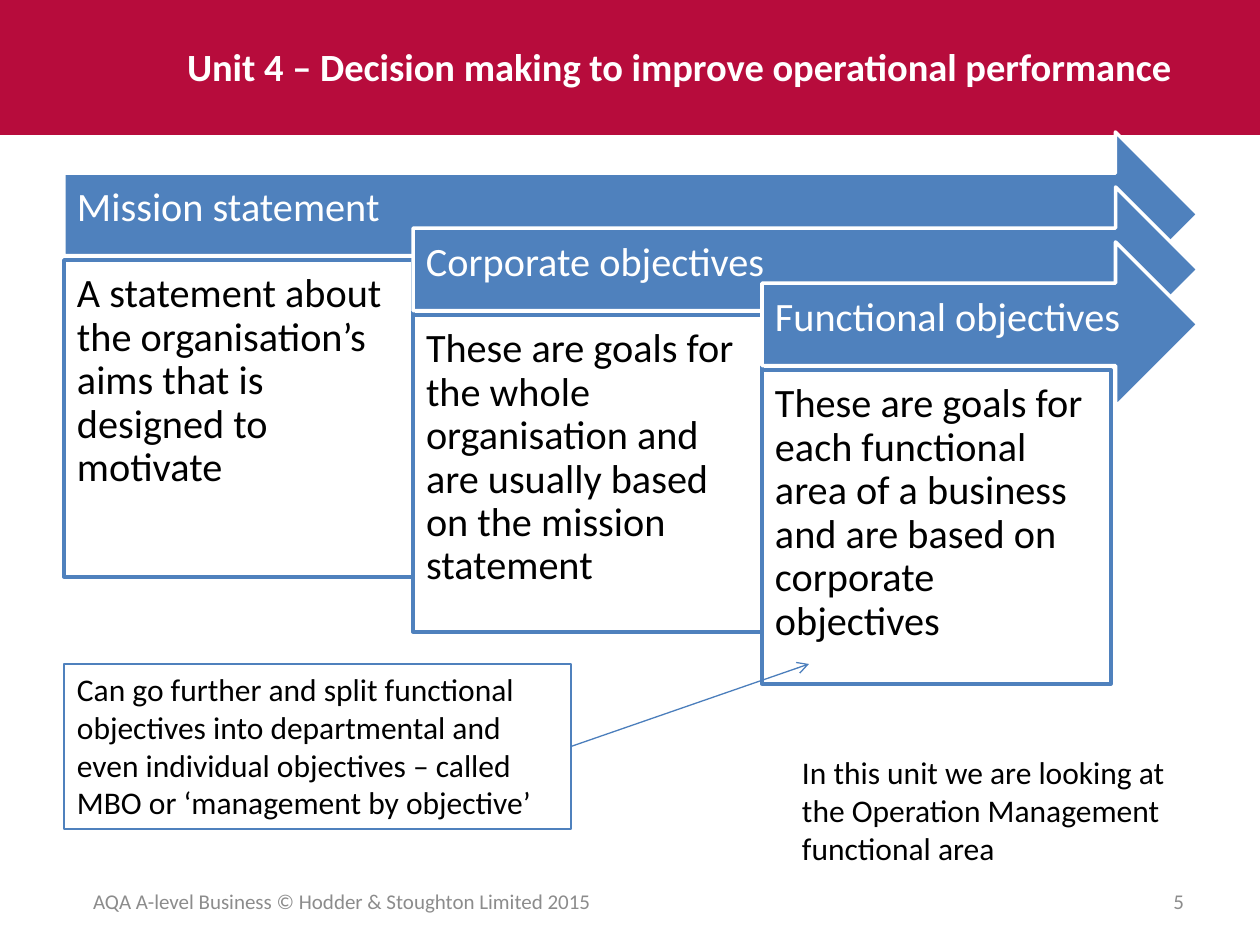
"""Builds the slide on mission, corporate and functional objectives."""
from lxml.etree import SubElement
from pptx import Presentation
from pptx.dml.color import RGBColor
from pptx.enum.shapes import MSO_CONNECTOR, MSO_SHAPE
from pptx.enum.text import MSO_ANCHOR, PP_ALIGN
from pptx.oxml.ns import qn
from pptx.util import Emu, Pt

EMU_PER_PX = 914400 / 126
COLORS = {"band": "B70C3C", "blue": "4F81BD", "link": "4B7EBC",
          "white": "FFFFFF", "black": "000000", "grey": "8C8C8C"}
FONT = "Calibri"
PAD = (13, 6, 13, 6)
STEP_X, STEP_Y = 349, 55
LEFT, ARROW_RIGHT, LABEL_RIGHT = 64, 1198, 1157
STEPS = [
    ("Mission statement",
     "A statement about the organisation’s aims that is designed to motivate", 317),
    ("Corporate objectives",
     "These are goals for the whole organisation and are usually based "
     "on the mission statement", 317),
    ("Functional objectives",
     "These are goals for each functional area of a business and are "
     "based on corporate objectives", 314),
]


def px(value):
    return Emu(round(value * EMU_PER_PX))


def rgb(name):
    return RGBColor.from_string(COLORS[name])


def write(sp, text, size, color="black", bold=False, align=PP_ALIGN.LEFT,
          anchor=MSO_ANCHOR.TOP, pad=PAD, spacing=None):
    tf = sp.text_frame
    tf.word_wrap = True
    tf.vertical_anchor = anchor
    tf.margin_left, tf.margin_top, tf.margin_right, tf.margin_bottom = map(px, pad)
    p = tf.paragraphs[0]
    p.alignment = align
    p.line_spacing = spacing
    r = p.add_run()
    r.text = text
    r.font.name = FONT
    r.font.size = Pt(size)
    r.font.bold = bold
    r.font.color.rgb = rgb(color)


def add_text(s, box, text, size, **style):
    write(s.shapes.add_textbox(*map(px, box)), text, size, **style)


def add_block(s, kind, box, fill=None, line=None, width=2):
    sp = s.shapes.add_shape(kind, *map(px, box))
    sp.shadow.inherit = False
    if fill:
        sp.fill.solid()
        sp.fill.fore_color.rgb = rgb(fill)
    else:
        sp.fill.background()
    if line:
        sp.line.color.rgb = rgb(line)
        sp.line.width = Pt(width)
    else:
        sp.line.fill.background()
    return sp


def add_step(s, index, heading, body, height):
    x, y = LEFT + index * STEP_X, 132 + index * STEP_Y
    add_block(s, MSO_SHAPE.RIGHT_ARROW, (x, y, ARROW_RIGHT - x, 165), "blue", "white")
    add_text(s, (x, y + 41, LABEL_RIGHT - x, 83), heading, 23, color="white",
             anchor=MSO_ANCHOR.MIDDLE, pad=(13, 13, 26, 26), spacing=0.9)
    sp = add_block(s, MSO_SHAPE.RECTANGLE, (x, y + 128, STEP_X, height), "white", "blue")
    write(sp, body, 23, pad=(13, 13, 13, 13), spacing=0.9)


def add_arrow(s, source, site, x, y):
    cxn = s.shapes.add_connector(MSO_CONNECTOR.STRAIGHT, px(x), px(y), px(x), px(y))
    cxn.begin_connect(source, site)
    cxn.line.color.rgb = rgb("link")
    cxn.line.width = Pt(0.75)
    SubElement(cxn.line._get_or_add_ln(), qn("a:tailEnd"), type="arrow")
    SubElement(cxn._element.spPr, qn("a:effectLst"))


def main():
    prs = Presentation()
    prs.slide_width, prs.slide_height = px(1260), px(945)
    s = prs.slides.add_slide(prs.slide_layouts[6])

    add_block(s, MSO_SHAPE.RECTANGLE, (0, 0, 1260, 135), "band")
    add_text(s, (174, 37, 1042, 59),
             "Unit 4 – Decision making to improve operational performance",
             22, color="white", bold=True)
    for index, step in enumerate(STEPS):
        add_step(s, index, *step)

    note = add_block(s, MSO_SHAPE.RECTANGLE, (LEFT, 664, 507, 165), None, "blue", 0.75)
    write(note, "Can go further and split functional objectives into departmental and "
          "even individual objectives – called MBO or ‘management by objective’", 18)
    add_arrow(s, note, 3, 809, 664)
    add_text(s, (789, 747, 407, 127),
             "In this unit we are looking at the Operation Management functional area", 18)

    footer = {"color": "grey", "anchor": MSO_ANCHOR.MIDDLE}
    add_text(s, (LEFT, 876, 556, 50),
             "AQA A-level Business © Hodder & Stoughton Limited 2015",
             12, align=PP_ALIGN.CENTER, **footer)
    add_text(s, (903, 876, 294, 50), "5", 12, align=PP_ALIGN.RIGHT, **footer)
    prs.save("out.pptx")


if __name__ == "__main__":
    main()
